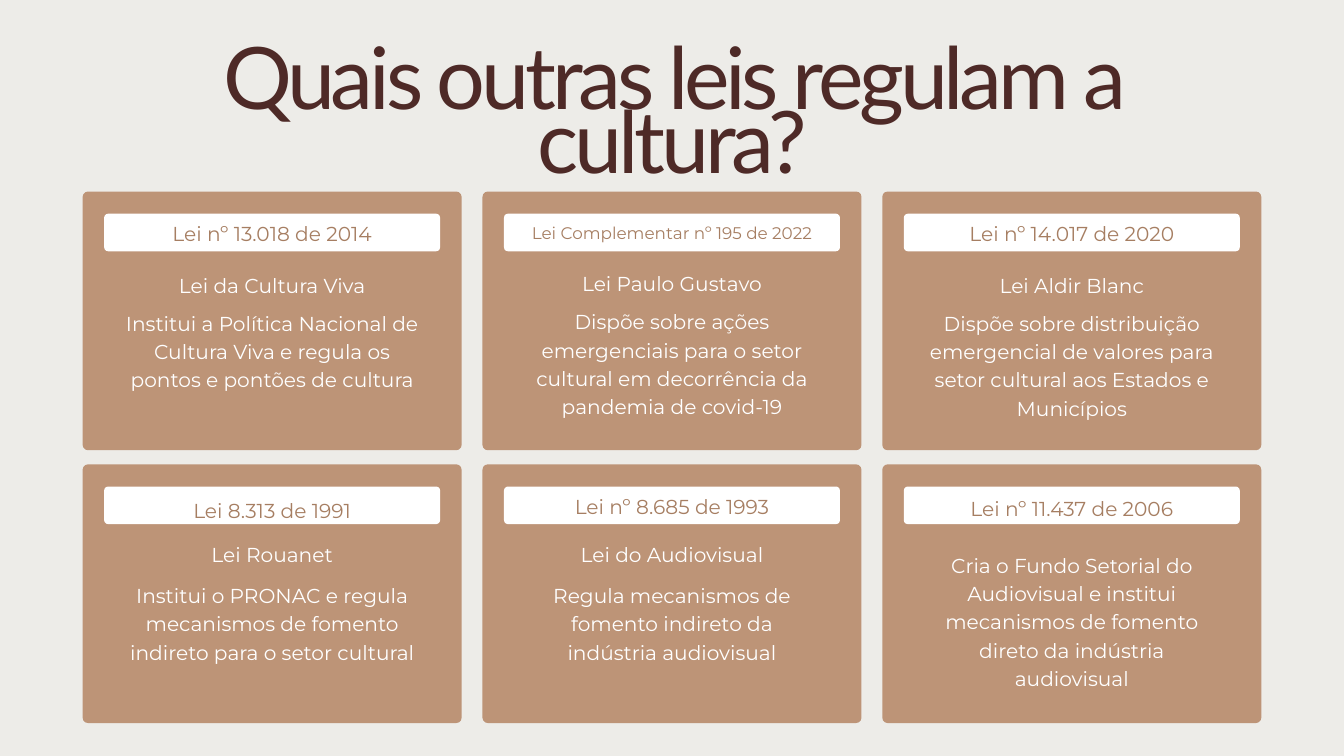
import pptx
import pptx.dml.color
import pptx.enum.shapes
import pptx.enum.text
import pptx.util

RGBColor = pptx.dml.color.RGBColor
BACKGROUND = RGBColor(0xED, 0xEC, 0xE8)
CARD = RGBColor(0xBD, 0x94, 0x77)
WHITE = RGBColor(0xFF, 0xFF, 0xFF)
LAW_NUMBER = RGBColor(0xA6, 0x7E, 0x62)
TITLE = RGBColor(0x4E, 0x2A, 0x27)

EMU_PER_PX = 9144
CARD_LEFT, CARD_WIDTH, CARD_HEIGHT, COLUMN_STEP = 123, 564, 385, 595
ROW_TOPS = (285, 691)
TEXT_INSET, TEXT_WIDTH, LINE_HEIGHT = 62, 440, 41

LAWS = [
    [
        dict(number="Lei nº 13.018 de 2014", number_top=38,
             name="Lei da Cultura Viva", name_top=115,
             summary="Institui a Política Nacional de Cultura Viva e regula os pontos e pontões de cultura",
             summary_top=172, lines=3),
        dict(number="Lei Complementar nº 195 de 2022", number_top=41,
             number_size=18, number_spacing=25.2,
             name="Lei Paulo Gustavo", name_top=113,
             summary="Dispõe sobre ações emergenciais para o setor cultural em decorrência da pandemia de covid-19",
             summary_top=170, lines=4),
        dict(number="Lei nº 14.017 de 2020", number_top=38,
             name="Lei Aldir Blanc", name_top=115,
             summary="Dispõe sobre distribuição emergencial de valores para setor cultural aos Estados e Municípios",
             summary_top=172, lines=4),
    ],
    [
        dict(number="Lei 8.313 de 1991", number_top=45,
             name="Lei Rouanet", name_top=110,
             summary="Institui o PRONAC e regula mecanismos de fomento indireto para o setor cultural",
             summary_top=171, lines=3),
        dict(number="Lei nº 8.685 de 1993", number_top=39,
             name="Lei do Audiovisual", name_top=110,
             summary="Regula mecanismos de fomento indireto da indústria audiovisual",
             summary_top=171, lines=3),
        dict(number="Lei nº 11.437 de 2006", number_top=42,
             summary="Cria o Fundo Setorial do Audiovisual e institui mecanismos de fomento direto da indústria audiovisual",
             summary_top=126, lines=5),
    ],
]


def px(length):
    return pptx.util.Emu(length * EMU_PER_PX)


def write_text(shape, text, color=WHITE, font="Montserrat", size=21.6,
               line_spacing=30.3, tracking=None):
    frame = shape.text_frame
    frame.margin_left = frame.margin_top = frame.margin_right = frame.margin_bottom = 0
    frame.word_wrap = True
    frame.vertical_anchor = pptx.enum.text.MSO_ANCHOR.TOP
    frame.auto_size = pptx.enum.text.MSO_AUTO_SIZE.SHAPE_TO_FIT_TEXT
    paragraph = frame.paragraphs[0]
    paragraph.alignment = pptx.enum.text.PP_ALIGN.CENTER
    paragraph.line_spacing = pptx.util.Pt(line_spacing)
    run = paragraph.add_run()
    run.text = text
    run.font.name = font
    run.font.size = pptx.util.Pt(size)
    run.font.color.rgb = color
    if tracking is not None:
        run._r.get_or_add_rPr().set("spc", str(round(tracking * 100)))


def add_text(slide, text, left, top, width, height, **text_format):
    shape = slide.shapes.add_textbox(px(left), px(top), px(width), px(height))
    write_text(shape, text, **text_format)


def add_rounded_box(slide, left, top, width, height, color, radius):
    shape = slide.shapes.add_shape(
        pptx.enum.shapes.MSO_SHAPE.ROUNDED_RECTANGLE,
        px(left), px(top), px(width), px(height))
    shape.adjustments[0] = radius / min(width, height)
    shape.shadow.inherit = False
    shape.fill.solid()
    shape.fill.fore_color.rgb = color
    shape.line.fill.background()


def add_title(slide, left, top, width, height):
    title = slide.shapes.title
    title.left, title.top = px(left), px(top)
    title.width, title.height = px(width), px(height)
    write_text(title, "Quais outras leis regulam a cultura?", color=TITLE,
               font="Lato", size=92.3, line_spacing=69.3, tracking=-4.5)


def add_law_card(slide, law, left, top, width, height):
    add_rounded_box(slide, left, top, width, height, CARD, radius=8)
    add_rounded_box(slide, left + 32, top + 33, width - 64, 56, WHITE, radius=6)
    text_left = left + TEXT_INSET
    add_text(slide, law["number"], text_left, top + law["number_top"],
             TEXT_WIDTH, LINE_HEIGHT, color=LAW_NUMBER,
             size=law.get("number_size", 21.6),
             line_spacing=law.get("number_spacing", 30.3))
    if "name" in law:
        add_text(slide, law["name"], text_left, top + law["name_top"],
                 TEXT_WIDTH, LINE_HEIGHT)
    add_text(slide, law["summary"], text_left, top + law["summary_top"],
             TEXT_WIDTH, LINE_HEIGHT * law["lines"])


def main():
    presentation = pptx.Presentation()
    presentation.slide_width, presentation.slide_height = px(2000), px(1125)
    slide = presentation.slides.add_slide(presentation.slide_layouts[5])
    slide.background.fill.solid()
    slide.background.fill.fore_color.rgb = BACKGROUND
    add_title(slide, 150, 92, 1701, 192)
    for top, row in zip(ROW_TOPS, LAWS):
        for column, law in enumerate(row):
            add_law_card(slide, law, CARD_LEFT + column * COLUMN_STEP, top,
                         CARD_WIDTH, CARD_HEIGHT)
    presentation.save("out.pptx")


if __name__ == "__main__":
    main()
